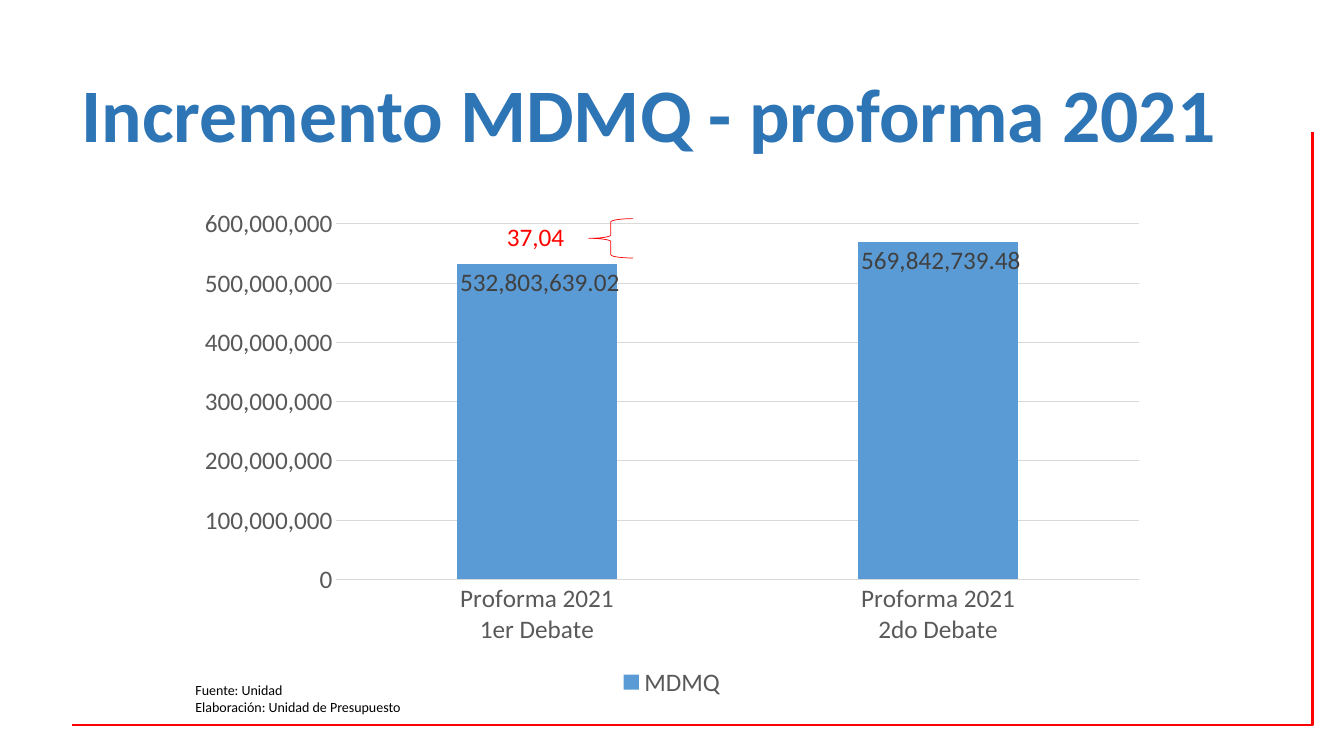
from dataclasses import dataclass

from pptx import Presentation
from pptx.chart.data import CategoryChartData
from pptx.dml.color import RGBColor
from pptx.enum import chart as charts, shapes, text
from pptx.util import Pt


@dataclass(frozen=True)
class Theme:
    font: str = "Calibri"
    title: str = "2E75B6"
    accent: str = "FF0000"
    bar: str = "5B9BD5"
    axis: str = "595959"
    value: str = "404040"
    grid: str = "D9D9D9"
    ink: str = "000000"
    title_size: float = 54
    body_size: float = 18
    note_size: float = 10


THEME = Theme()


def style_font(font, size, color, bold=False):
    font.name = THEME.font
    font.size = Pt(size)
    font.bold = bold
    font.color.rgb = RGBColor.from_string(color)


def style_line(line, color, width):
    line.color.rgb = RGBColor.from_string(color)
    line.width = Pt(width)


def add_text(slide, box, content, size, color, bold=False, wrap=True, spacing=None):
    frame = slide.shapes.add_textbox(*map(Pt, box)).text_frame
    frame.word_wrap = wrap
    frame.vertical_anchor = text.MSO_ANCHOR.TOP
    for index, line in enumerate(content.split("\n")):
        paragraph = frame.paragraphs[0] if index == 0 else frame.add_paragraph()
        if spacing:
            paragraph.line_spacing = spacing
        run = paragraph.add_run()
        run.text = line
        style_font(run.font, size, color, bold)


def add_frame(slide, box):
    left, top, width, height = box
    right, bottom = left + width, top + height
    builder = slide.shapes.build_freeform(Pt(right), Pt(top))
    builder.add_line_segments([(Pt(right), Pt(bottom)), (Pt(left), Pt(bottom))], close=False)
    corner = builder.convert_to_shape()
    corner.shadow.inherit = False
    corner.fill.background()
    style_line(corner.line, THEME.accent, 1.75)


def add_budget_chart(slide, box):
    budget = CategoryChartData(number_format="#,##0.00")
    budget.categories = ["Proforma 2021\n1er Debate", "Proforma 2021\n2do Debate"]
    budget.add_series("MDMQ", [532803639.02, 569842739.48])
    chart = slide.shapes.add_chart(
        charts.XL_CHART_TYPE.COLUMN_STACKED, *map(Pt, box), budget
    ).chart
    style_font(chart.font, THEME.body_size, THEME.axis)
    chart.has_title = False
    chart.has_legend = True
    chart.legend.position = charts.XL_LEGEND_POSITION.BOTTOM
    chart.legend.include_in_layout = False
    style_font(chart.legend.font, THEME.body_size, THEME.axis)

    for axis in (chart.category_axis, chart.value_axis):
        axis.major_tick_mark = axis.minor_tick_mark = charts.XL_TICK_MARK.NONE
        style_font(axis.tick_labels.font, THEME.body_size, THEME.axis)
    style_line(chart.category_axis.format.line, THEME.grid, 0.75)
    amounts = chart.value_axis
    amounts.minimum_scale = 0
    amounts.maximum_scale = 600000000
    amounts.major_unit = 100000000
    amounts.tick_labels.number_format = "#,##0"
    amounts.tick_labels.number_format_is_linked = False
    amounts.format.line.fill.background()
    amounts.has_major_gridlines = True
    style_line(amounts.major_gridlines.format.line, THEME.grid, 0.75)

    plot = chart.plots[0]
    plot.vary_by_categories = False
    plot.gap_width = 150
    plot.overlap = 100
    bars = plot.series[0]
    bars.format.fill.solid()
    bars.format.fill.fore_color.rgb = RGBColor.from_string(THEME.bar)
    labels = bars.data_labels
    labels.show_value = True
    labels.position = charts.XL_LABEL_POSITION.INSIDE_END
    labels.number_format = "_(* #,##0.00_)"
    labels.number_format_is_linked = False
    style_font(labels.font, THEME.body_size, THEME.value)


def add_increase(slide, box):
    left, top, width, height = box
    brace_width = 31.7
    brace = slide.shapes.add_shape(
        shapes.MSO_SHAPE.LEFT_BRACE,
        Pt(left + width - brace_width), Pt(top + 1.4), Pt(brace_width), Pt(height - 0.7),
    )
    brace.shadow.inherit = False
    brace.fill.background()
    style_line(brace.line, THEME.accent, 0.5)
    add_text(slide, (left, top, 56.2, height), "37,04",
             size=THEME.body_size, color=THEME.accent, wrap=False)


def add_increase_slide(deck):
    slide = deck.slides.add_slide(deck.slide_layouts[6])
    add_frame(slide, (51.8, 94.3, 885.6, 423.4))
    add_text(slide, (51.1, 51.8, 828, 104.4), "Incremento MDMQ - proforma 2021",
             size=THEME.title_size, color=THEME.title, bold=True, spacing=0.9)
    add_budget_chart(slide, (132.5, 141.8, 694.8, 360))
    add_increase(slide, (355, 154.8, 97.2, 28.8))
    add_text(slide, (132.5, 483.1, 352.1, 31.7),
             "Fuente: Unidad\nElaboración: Unidad de Presupuesto",
             size=THEME.note_size, color=THEME.ink)


def main():
    deck = Presentation()
    deck.slide_width = Pt(960)
    deck.slide_height = Pt(540)
    add_increase_slide(deck)
    deck.save("out.pptx")


if __name__ == "__main__":
    main()
